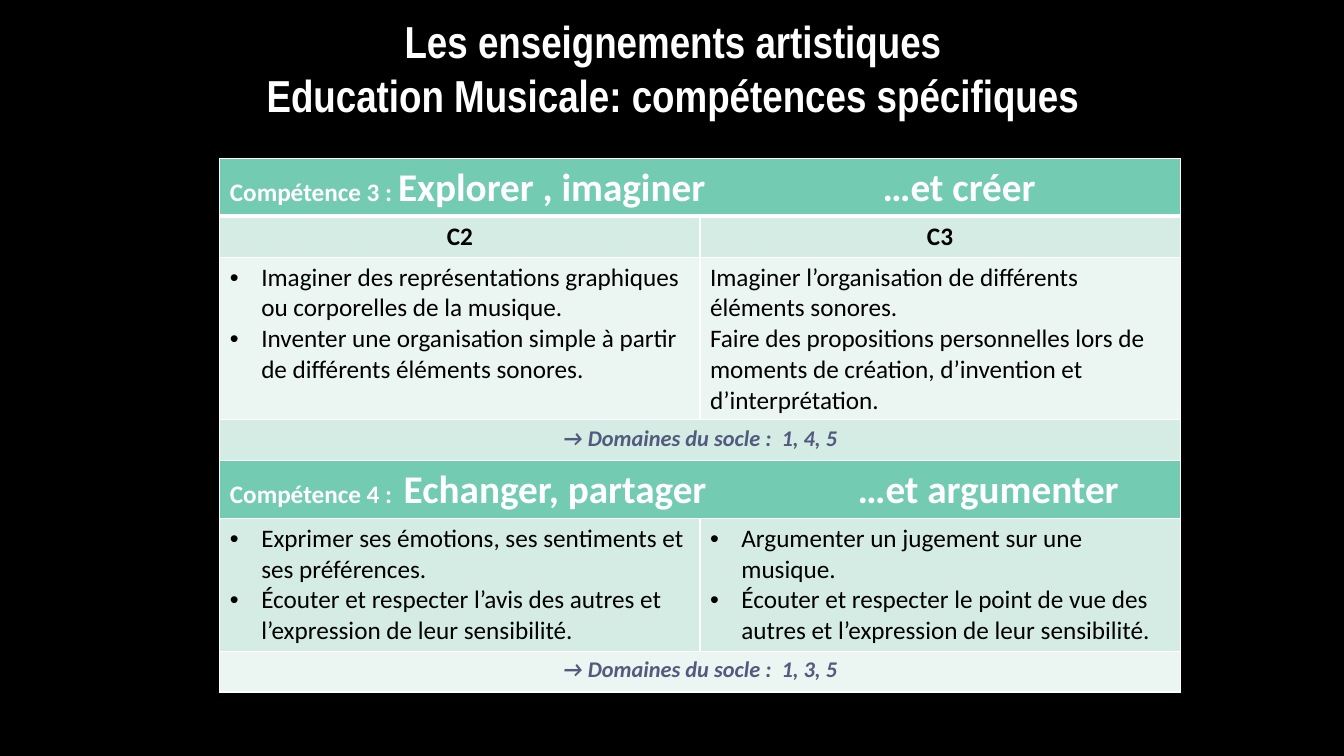
from dataclasses import dataclass

from lxml import etree
from pptx import Presentation, util as u
from pptx.dml.color import RGBColor
from pptx.enum import text
from pptx.oxml.ns import qn


@dataclass
class Theme:
    back: str = "000000"
    ink: str = "000000"
    white: str = "FFFFFF"
    head: str = "73CBB2"
    dark: str = "D5ECE4"
    light: str = "EBF6F2"
    note: str = "525B7E"
    face: str = "Arial Narrow"
    body: str = "Calibri"
    title: int = 32
    big: int = 28
    base: int = 18
    small: int = 16


class Deck:
    def __init__(self, theme, wide, high):
        self.th = theme
        self.prs = Presentation()
        self.prs.slide_width, self.prs.slide_height = u.Cm(wide), u.Cm(high)
        self.page = self.prs.slides.add_slide(self.prs.slide_layouts[6])
        fill = self.page.background.fill
        fill.solid()
        fill.fore_color.rgb = RGBColor.from_string(theme.back)

    def run(self, para, words, size, color, bold=False, slant=False, face=None):
        run = para.add_run()
        run.text = words
        font = run.font
        font.name, font.size = face or self.th.body, u.Pt(size)
        font.bold, font.italic = bold, slant
        font.color.rgb = RGBColor.from_string(color)

    def title(self, lines, left, top, wide, high):
        frame = self.page.shapes.add_textbox(
            *map(u.Cm, (left, top, wide, high))).text_frame
        frame.word_wrap = True
        frame.vertical_anchor = text.MSO_ANCHOR.MIDDLE
        para = frame.paragraphs[0]
        para.alignment = text.PP_ALIGN.CENTER
        for i, line in enumerate(lines):
            if i:
                para.add_line_break()
            self.run(para, line, self.th.title, self.th.white, True,
                     face=self.th.face)

    def table(self, left, top, wide, highs):
        self.grid = self.page.shapes.add_table(
            len(highs), 2, *map(u.Cm, (left, top, wide, sum(highs)))).table
        self.grid.first_row = self.grid.horz_banding = False
        for row, high in zip(self.grid.rows, highs):
            row.height = u.Cm(high)

    def border(self, cell, side, width):
        line = etree.SubElement(cell._tc.get_or_add_tcPr(), qn("a:ln" + side),
                                w=str(u.Pt(width)))
        fill = etree.SubElement(line, qn("a:solidFill"))
        etree.SubElement(fill, qn("a:srgbClr"), val=self.th.white)

    def paint(self, row, color):
        for col in range(2):
            cell = self.grid.cell(row, col)
            for side in "LRTB":
                # Thick rule under the first heading
                thick = (row, side) in ((0, "B"), (1, "T"))
                self.border(cell, side, 3 if thick else 1)
            cell.fill.solid()
            cell.fill.fore_color.rgb = RGBColor.from_string(color)

    def span(self, row, color):
        self.paint(row, color)
        cell = self.grid.cell(row, 0)
        cell.merge(self.grid.cell(row, 1))
        return cell.text_frame.paragraphs[0]

    def band(self, row, label, start, end, stop):
        para = self.span(row, self.th.head)
        tabs = etree.SubElement(para._p.get_or_add_pPr(), qn("a:tabLst"))
        etree.SubElement(tabs, qn("a:tab"), pos=str(u.Cm(stop)), algn="l")
        self.run(para, label, self.th.base, self.th.white, True)
        self.run(para, f"{start}\t{end}", self.th.big, self.th.white, True)

    def note(self, row, words, color):
        para = self.span(row, color)
        para.alignment = text.PP_ALIGN.CENTER
        self.run(para, words, self.th.small, self.th.note, True, True)

    def heads(self, row, names, color):
        self.paint(row, color)
        for col, name in enumerate(names):
            para = self.grid.cell(row, col).text_frame.paragraphs[0]
            para.alignment = text.PP_ALIGN.CENTER
            self.run(para, name, self.th.base, self.th.ink, True)

    def points(self, row, col, items, dots=True):
        frame = self.grid.cell(row, col).text_frame
        for i, item in enumerate(items):
            para = frame.add_paragraph() if i else frame.paragraphs[0]
            if dots:
                prop = para._p.get_or_add_pPr()
                prop.set("marL", str(u.Cm(0.79)))
                prop.set("indent", str(u.Cm(-0.79)))
                etree.SubElement(prop, qn("a:buFont"), typeface="Arial")
                etree.SubElement(prop, qn("a:buChar"), char="•")
            self.run(para, item, self.th.base, self.th.ink)


def main():
    th = Theme()
    deck = Deck(th, 33.87, 19.05)

    # Title
    deck.title(["Les enseignements artistiques",
                "Education Musicale: compétences spécifiques"],
               5.54, 0.33, 22.86, 2.74)

    # Skills table
    deck.table(5.54, 4, 24.2, [1.45, 1.03, 4.1, 1.03, 1.45, 3.35, 1.03])

    # Skill 3
    deck.band(0, "Compétence 3 : ", "Explorer , imaginer", "…et créer", 16.45)
    deck.heads(1, ["C2", "C3"], th.dark)
    deck.paint(2, th.light)
    deck.points(2, 0, [
        "Imaginer des représentations graphiques ou corporelles de la musique.",
        "Inventer une organisation simple à partir de différents éléments "
        "sonores."])
    deck.points(2, 1, [
        "Imaginer l’organisation de différents éléments sonores.",
        "Faire des propositions personnelles lors de moments de création, "
        "d’invention et d’interprétation."], dots=False)
    deck.note(3, "→ Domaines du socle :  1, 4, 5", th.dark)

    # Skill 4
    deck.band(4, "Compétence 4 :  ", "Echanger, partager", "…et argumenter",
              15.82)
    deck.paint(5, th.dark)
    deck.points(5, 0, [
        "Exprimer ses émotions, ses sentiments et ses préférences.",
        "Écouter et respecter l’avis des autres et l’expression de leur "
        "sensibilité."])
    deck.points(5, 1, [
        "Argumenter un jugement sur une musique.",
        "Écouter et respecter le point de vue des autres et l’expression de "
        "leur sensibilité."])
    deck.note(6, "→ Domaines du socle :  1, 3, 5", th.light)

    deck.prs.save("out.pptx")


if __name__ == "__main__":
    main()
